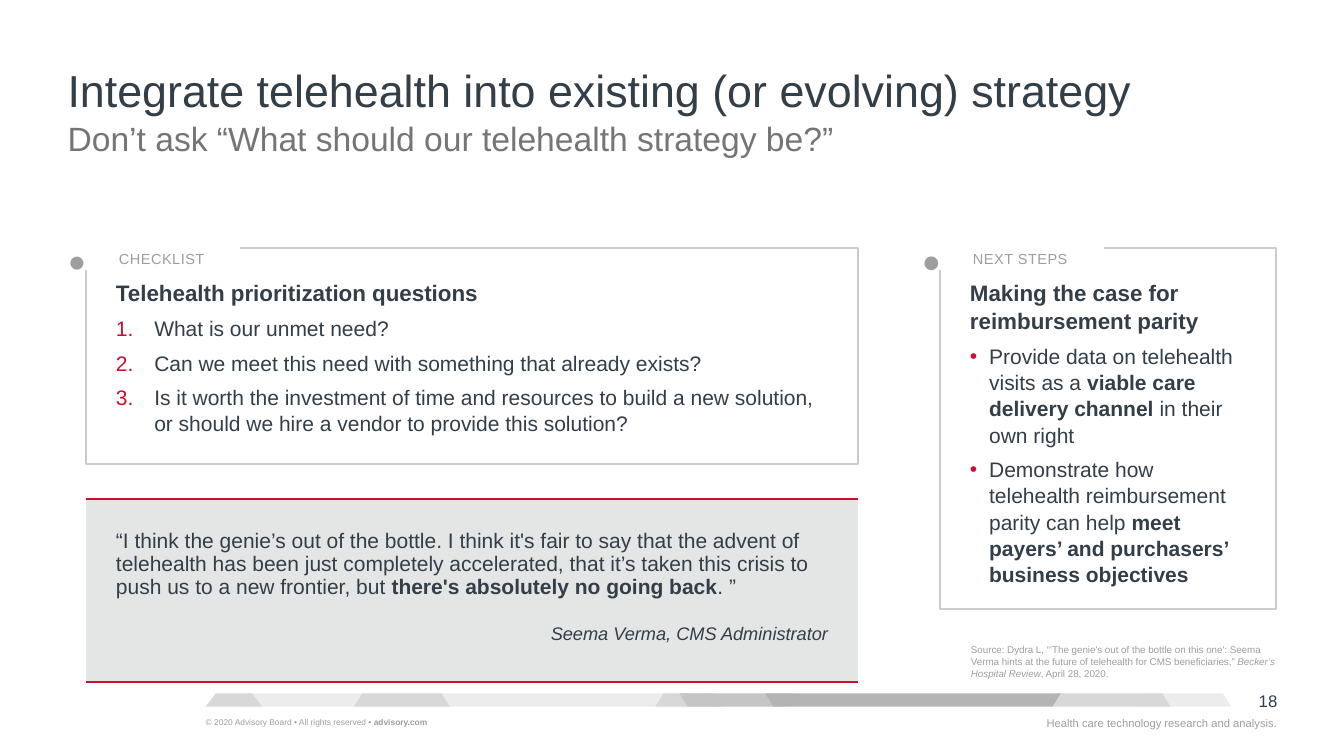
from pptx import Presentation
from pptx.dml.color import RGBColor
from pptx.enum.shapes import MSO_SHAPE
from pptx.enum.text import MSO_ANCHOR, MSO_AUTO_SIZE, PP_ALIGN
from pptx.oxml.ns import qn
from pptx.util import Pt
from lxml.etree import SubElement

EMU_PER_PX = 9144
NAVY = RGBColor(0x32, 0x3E, 0x48)
GRAY = RGBColor(0x9E, 0x9E, 0x9E)
DARK_GRAY = RGBColor(0x75, 0x75, 0x76)
BORDER = RGBColor(0xCC, 0xCC, 0xCC)
RED = RGBColor(0xCE, 0x0E, 0x2D)
PANEL = RGBColor(0xE4, 0xE5, 0xE5)
WHITE = RGBColor(0xFF, 0xFF, 0xFF)
PALE = RGBColor(0xEC, 0xEC, 0xEC)
LIGHT = RGBColor(0xD8, 0xD8, 0xD8)
MEDIUM = RGBColor(0xC5, 0xC5, 0xC5)
STRONG = RGBColor(0xB4, 0xB4, 0xB4)

COMPARISON_LAYOUT = 4
BAND_TOP, BAND_HEIGHT = 688, 13
BAND = [
    (235, 472, 0, PALE), (650, 66, 0, LIGHT), (674, 112, 180, MEDIUM),
    (351, 95, 0, LIGHT), (1126, 95, 0, PALE), (1041, 120, 0, LIGHT),
    (759, 293, 180, STRONG),
]


def px(n):
    return round(n * EMU_PER_PX)


class Deck:
    """Holds the text style and current slide, and draws each kind of element."""

    def __init__(self, prs, font="Arial"):
        self.font = font
        self.s = prs.slides.add_slide(prs.slide_layouts[COMPARISON_LAYOUT])

    def place(self, sp, x, y, w, h):
        sp.left, sp.top, sp.width, sp.height = px(x), px(y), px(w), px(h)
        return sp

    def frame(self, tf, inset=0, anchor=MSO_ANCHOR.TOP, wrap=True):
        tf.auto_size = MSO_AUTO_SIZE.NONE
        tf.word_wrap = wrap
        tf.vertical_anchor = anchor
        tf.margin_left = tf.margin_right = px(inset)
        tf.margin_top = tf.margin_bottom = px(inset)
        return tf

    def bullet(self, p, hang, color, char=None, percent=100):
        pPr = p._p.get_or_add_pPr()
        pPr.set("marL", str(px(hang)))
        pPr.set("indent", str(-px(hang)))
        if hang == 0:
            SubElement(pPr, qn("a:buNone"))
            return
        SubElement(SubElement(pPr, qn("a:buClr")), qn("a:srgbClr"), val=str(color))
        SubElement(pPr, qn("a:buSzPct"), val=str(percent * 1000))
        SubElement(pPr, qn("a:buFont"), typeface=self.font)
        if char:
            SubElement(pPr, qn("a:buChar"), char=char)
        else:
            SubElement(pPr, qn("a:buAutoNum"), type="arabicPeriod")

    def para(self, tf, runs, size, color=NAVY, before=0, align=PP_ALIGN.LEFT,
             spacing=1.0, hang=0, **bullet):
        p = tf.paragraphs[0]
        if p.runs:
            p = tf.add_paragraph()
        p.alignment = align
        p.line_spacing = spacing
        p.space_before = Pt(before)
        self.bullet(p, hang, **{"color": color, **bullet})
        for text, style in runs:
            r = p.add_run()
            r.text = text
            r.font.name = self.font
            r.font.size = Pt(size)
            r.font.color.rgb = color
            r.font.bold = "b" in style
            r.font.italic = "i" in style
        return p

    def holder(self, idx, box, **frame):
        sp = self.place(self.s.placeholders[idx], *box)
        return self.frame(sp.text_frame, **frame)

    def text(self, box, runs, size, color, align=PP_ALIGN.LEFT):
        sp = self.s.shapes.add_textbox(*map(px, box))
        self.para(self.frame(sp.text_frame), runs, size, color, align=align)

    def shape(self, kind, box, fill):
        sp = self.s.shapes.add_shape(kind, *map(px, box))
        sp.shadow.inherit = False
        sp.fill.solid()
        sp.fill.fore_color.rgb = fill
        sp.line.fill.background()
        return sp

    def trapezoid(self, x, w, rotation, fill):
        sp = self.shape(MSO_SHAPE.TRAPEZOID, (x, BAND_TOP, w, BAND_HEIGHT), fill)
        sp.adjustments[0] = 0.63
        sp.rotation = rotation

    def band_end(self, points, fill):
        fb = self.s.shapes.build_freeform(*points[0], scale=EMU_PER_PX)
        fb.add_line_segments(points[1:], close=True)
        sp = fb.convert_to_shape()
        sp.shadow.inherit = False
        sp.fill.solid()
        sp.fill.fore_color.rgb = fill
        sp.line.fill.background()

    def checklist(self, idx, box, heading, items, hang, char=None):
        tf = self.holder(idx, box, inset=30)
        line = self.s.placeholders[idx].line
        line.color.rgb = BORDER
        line.width = Pt(1.5)
        self.para(tf, [(heading, "b")], 16, spacing=1.04)
        for runs in items:
            self.item(tf, runs, hang, char)

    def item(self, tf, runs, hang, char):
        p = self.para(tf, runs, 15, before=6, spacing=1.04, hang=hang, char=char)
        p._p.pPr.find(qn("a:buClr"))[0].set("val", str(RED))

    def tag(self, box, label, percent):
        sp = self.shape(MSO_SHAPE.RECTANGLE, box, WHITE)
        sp.line.color.rgb = WHITE
        sp.line.width = Pt(3)
        tf = self.frame(sp.text_frame, wrap=False)
        tf.margin_right = px(20)
        p = self.para(tf, [(label, "")], 18, GRAY, hang=50, char="•", percent=percent)
        rPr = p.runs[0].font._element
        rPr.set("baseline", "36000")
        rPr.set("spc", "30")

    def quote(self, box, quote, speaker):
        table = self.s.shapes.add_table(1, 1, *map(px, box)).table
        table.first_row = table.horz_banding = False
        cell = table.cell(0, 0)
        cell.margin_left = cell.margin_right = px(30)
        cell.margin_top = cell.margin_bottom = px(30)
        self.para(cell.text_frame, quote, 15)
        self.para(cell.text_frame, speaker, 13, before=18, align=PP_ALIGN.RIGHT)
        tcPr = cell._tc.get_or_add_tcPr()
        for side, width in (("L", 0), ("R", 0), ("T", 2.25), ("B", 1.5)):
            ln = SubElement(tcPr, qn(f"a:ln{side}"), w=str(Pt(width)))
            if width:
                fill = SubElement(ln, qn("a:solidFill"))
                SubElement(fill, qn("a:srgbClr"), val=str(RED))
            else:
                SubElement(ln, qn("a:noFill"))
        cell.fill.solid()
        cell.fill.fore_color.rgb = PANEL


def main():
    prs = Presentation()
    prs.slide_width, prs.slide_height = px(1333), px(750)
    d = Deck(prs)

    d.text((204, 711, 312, 10), [("© 2020 Advisory Board • All rights reserved • ", ""),
                                 ("advisory.com", "b")], 6, GRAY)
    d.text((1217, 685, 50, 20), [("18", "")], 12, NAVY, PP_ALIGN.RIGHT)
    for piece in BAND:
        d.trapezoid(*piece)
    d.band_end([(204, 701), (214, 688), (250, 688), (260, 701)], LIGHT)
    d.text((842, 711, 425, 13), [("Health care technology research and analysis.", "")],
           8, GRAY, PP_ALIGN.RIGHT)

    tf = d.holder(0, (67, 66, 1199, 50), anchor=MSO_ANCHOR.BOTTOM)
    d.para(tf, [("Integrate telehealth into existing (or evolving) strategy", "")],
           32, spacing=0.9)
    tf = d.holder(1, (67, 121, 1199, 37))
    d.para(tf, [("Don’t ask “What should our telehealth strategy be?”", "")],
           24, DARK_GRAY, spacing=0.9)
    tf = d.holder(3, (963, 639, 303, 35), anchor=MSO_ANCHOR.BOTTOM)
    d.para(tf, [("Source: Dydra L, “‘The genie's out of the bottle on this one': Seema Verma "
                 "hints at the future of telehealth for CMS beneficiaries,” ", ""),
                ("Becker’s Hospital Review", "i"), (", April 28, 2020.", "")], 7, GRAY)

    d.checklist(2, (85, 246, 766, 214), "Telehealth prioritization questions", [
        [("What is our unmet need?", "")],
        [("Can we meet this need with something that already exists?", "")],
        [("Is it worth the investment of time and resources to build a new solution, "
          "or should we hire a vendor to provide this solution?", "")],
    ], hang=38)
    d.checklist(4, (932, 246, 334, 358), "Making the case for reimbursement parity", [
        [("Provide data on telehealth visits as a ", ""),
         ("viable care delivery channel ", "b"), ("in their own right", "")],
        [("Demonstrate how telehealth reimbursement parity can help ", ""),
         ("meet payers’ and purchasers’ business objectives", "b")],
    ], hang=19, char="•")
    d.tag((68, 246, 168, 20), "CHECKLIST", 190)
    d.tag((915, 246, 178, 20), "NEXT STEPS", 200)

    d.quote((85, 495, 766, 182), [
        ("“I think the genie’s out of the bottle. I think it's fair to say that the advent of "
         "telehealth has been just completely accelerated, that it’s taken this crisis to "
         "push us to a new frontier, but ", ""),
        ("there's absolutely no going back", "b"), (". ”", ""),
    ], [("Seema Verma, CMS Administrator", "i")])

    prs.save("out.pptx")


if __name__ == "__main__":
    main()
